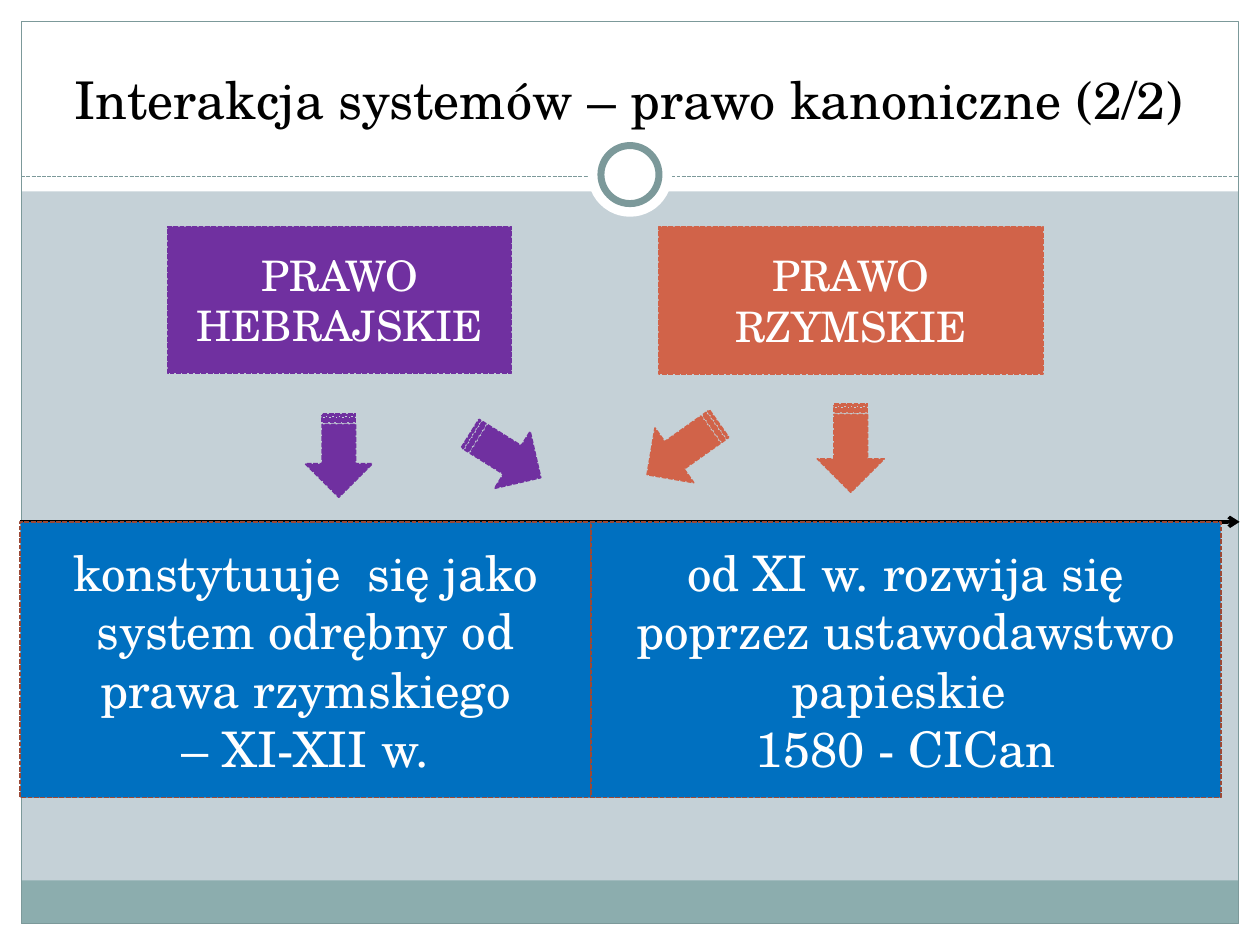
from dataclasses import dataclass

from lxml.etree import SubElement
from pptx import Presentation
from pptx.dml.color import RGBColor
from pptx.enum.dml import MSO_LINE
from pptx.enum.shapes import MSO_CONNECTOR, MSO_SHAPE
from pptx.enum.text import MSO_ANCHOR, MSO_AUTO_SIZE, PP_ALIGN
from pptx.oxml.ns import qn
from pptx.util import Cm, Pt


@dataclass(frozen=True)
class Theme:
    """Colours, type sizes and font of the slide."""
    font: str = "TeX Gyre Schola"
    back: str = "C5D1D7"
    white: str = "FFFFFF"
    black: str = "000000"
    teal: str = "8CADAE"
    edge: str = "7C999A"
    blue: str = "0070C0"
    rust: str = "9B4936"
    roman: str = "D16349"
    hebrew: str = "7030A0"
    head: float = 29.7
    body: float = 28
    label: float = 24
    gap: float = 18


THEME = Theme()
WIDE, HIGH = 25.4, 19.05
EDGE = 0.43
AXIS = 10.52


def rgb(code):
    """Turn a hex code into a colour."""
    return RGBColor.from_string(code)


def stroke(line, tint, width, dash=None):
    """Set the colour, width and dash of a line."""
    line.color.rgb = rgb(tint)
    line.width = Pt(width)
    if dash:
        line.dash_style = dash


def write(frame, lines, tint):
    """Fill a text frame with centred lines of (text, size) runs."""
    frame.word_wrap = True
    for i, runs in enumerate(lines):
        para = frame.paragraphs[0] if i == 0 else frame.add_paragraph()
        para.alignment = PP_ALIGN.CENTER
        for text, size in runs:
            run = para.add_run()
            run.text = text
            run.font.name = THEME.font
            run.font.size = Pt(size)
            run.font.color.rgb = rgb(tint)


def draw(slide, kind, spot, fill=None, line=None, width=0.75, dash=None):
    """Add a preset shape at (left, top, width, height)."""
    shape = slide.shapes.add_shape(kind, *map(Cm, spot))
    shape.shadow.inherit = False
    if fill:
        shape.fill.solid()
        shape.fill.fore_color.rgb = rgb(fill)
    else:
        shape.fill.background()
    if line:
        stroke(shape.line, line, width, dash)
    else:
        shape.line.fill.background()
    return shape


def rule(slide, left, right, top, tint, width, dash=None):
    """Add a level line."""
    line = slide.shapes.add_connector(
        MSO_CONNECTOR.STRAIGHT, Cm(left), Cm(top), Cm(right), Cm(top))
    stroke(line.line, tint, width, dash)
    SubElement(line.element.spPr, qn("a:effectLst"))
    return line


def ring(slide, size, line=None):
    """Add a white disc centred on the dashed rule."""
    spot = ((WIDE - size) / 2, 3.52 - size / 2, size, size)
    draw(slide, MSO_SHAPE.OVAL, spot, THEME.white, line, 4)


def border(slide):
    """Add the white margins, footer band, frame and rings."""
    bands = [
        ((0, HIGH - EDGE, WIDE, EDGE), THEME.white),
        ((0, 0, WIDE, 3.86), THEME.white),
        ((0, 0, EDGE, HIGH), THEME.white),
        ((WIDE - EDGE, 0, EDGE, HIGH), THEME.white),
        ((EDGE, 17.75, WIDE - 2 * EDGE, 0.87), THEME.teal),
    ]
    for spot, fill in bands:
        draw(slide, MSO_SHAPE.RECTANGLE, spot, fill)
    inner = (EDGE, EDGE, WIDE - 2 * EDGE, HIGH - 2 * EDGE)
    draw(slide, MSO_SHAPE.RECTANGLE, inner, line=THEME.edge)
    rule(slide, EDGE, WIDE - EDGE, 3.56, THEME.edge, 0.75, MSO_LINE.SQUARE_DOT)
    ring(slide, 1.7)
    ring(slide, 1.17, THEME.edge)


def title(slide, text):
    """Place the title in front of the border and format it."""
    head = slide.shapes.title
    head.element.getparent().append(head.element)
    head.left, head.top, head.width, head.height = map(Cm, (0.84, 0.64, 23.7, 2.11))
    frame = head.text_frame
    frame.auto_size = MSO_AUTO_SIZE.NONE
    frame.vertical_anchor = MSO_ANCHOR.BOTTOM
    write(frame, [[(text, THEME.head)]], THEME.black)


def axis(slide):
    """Add the time line with its arrowhead."""
    line = rule(slide, 0.41, 24.99, AXIS, THEME.black, 2)
    SubElement(line.line._get_or_add_ln(), qn("a:tailEnd"), type="arrow")


def box(slide, spot, fill, line, lines):
    """Add a dashed box with white text."""
    shape = draw(slide, MSO_SHAPE.RECTANGLE, spot, fill, line, 0.9, MSO_LINE.SQUARE_DOT)
    shape.text_frame.vertical_anchor = MSO_ANCHOR.MIDDLE
    write(shape.text_frame, lines, THEME.white)


def arrow(slide, spot, turn, tint):
    """Add a turned striped arrow."""
    shape = draw(slide, MSO_SHAPE.STRIPED_RIGHT_ARROW, spot, tint, tint, 0.9,
                 MSO_LINE.SQUARE_DOT)
    shape.rotation = turn


def main():
    """Build and save the slide."""
    deck = Presentation()
    deck.slide_width, deck.slide_height = Cm(WIDE), Cm(HIGH)
    slide = deck.slides.add_slide(deck.slide_layouts[5])
    slide.background.fill.solid()
    slide.background.fill.fore_color.rgb = rgb(THEME.back)
    border(slide)
    title(slide, "Interakcja systemów – prawo kanoniczne (2/2)")
    axis(slide)

    stages = [
        (0.41, 11.5, ["konstytuuje  się jako system odrębny od prawa rzymskiego",
                      "– XI-XII w."]),
        (11.91, 12.7, ["od XI w. rozwija się poprzez ustawodawstwo papieskie ",
                       "1580 - CICan"]),
    ]
    for left, width, texts in stages:
        box(slide, (left, AXIS, width, 5.56), THEME.blue, THEME.rust,
            [[(text, THEME.body)] for text in texts])

    box(slide, (13.28, 4.57, 7.75, 2.97), THEME.roman, THEME.roman,
        [[("PRAWO RZYMSKIE", THEME.label)]])
    arrows = [
        ((16.26, 8.36, 1.78, 1.35), 90, THEME.roman),
        ((12.88, 8.38, 1.78, 1.35), 144.7, THEME.roman),
        ((5.99, 8.51, 1.68, 1.35), 90, THEME.hebrew),
        ((9.35, 8.51, 1.68, 1.35), 32, THEME.hebrew),
    ]
    for spot, turn, tint in arrows:
        arrow(slide, spot, turn, tint)
    box(slide, (3.38, 4.57, 6.93, 2.95), THEME.hebrew, THEME.hebrew,
        [[("PRAWO", THEME.label), (" ", THEME.gap), ("HEBRAJSKIE", THEME.label)]])

    deck.save("out.pptx")


if __name__ == "__main__":
    main()
